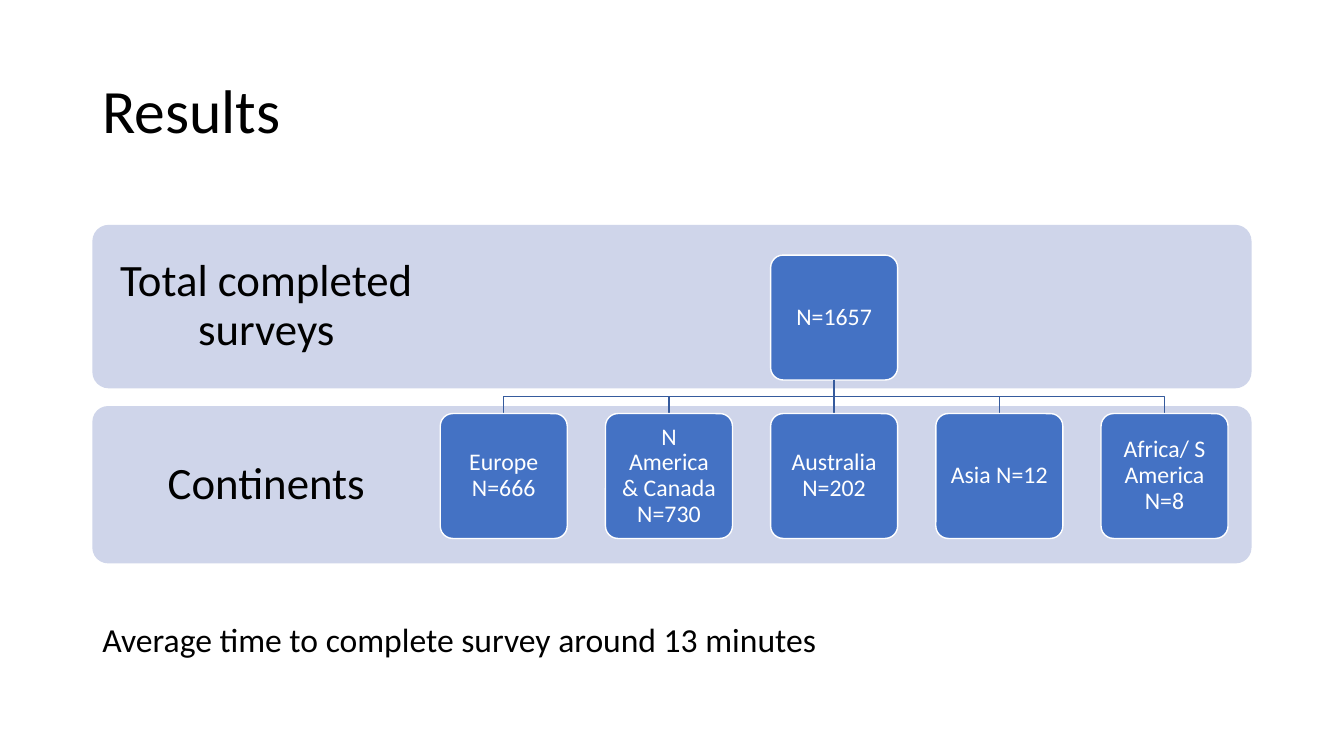
from lxml import etree
from pptx import Presentation
from pptx import util as u
from pptx.dml.color import RGBColor
from pptx.enum import shapes, text
from pptx.oxml.ns import qn

Pt = u.Pt
COLORS = {"text": "000000", "band": "CFD5EA", "node": "4472C4",
          "white": "FFFFFF", "link": "365B9D"}
CENTER = {"alignment": text.PP_ALIGN.CENTER, "line_spacing": 0.9}
LEFT = {"alignment": text.PP_ALIGN.LEFT}


def rgb(name):
    return RGBColor.from_string(COLORS[name])


def set_attrs(obj, values):
    for name, value in values.items():
        setattr(obj, name, value)


def write(sp, words, size, color, para, frame):
    tf = sp.text_frame
    set_attrs(tf, {"word_wrap": True, **frame})
    p = tf.paragraphs[0]
    set_attrs(p, para)
    r = p.add_run()
    r.text = words
    set_attrs(r.font, {"name": "Calibri", "size": Pt(size)})
    r.font.color.rgb = rgb(color)


def insets(gap):
    sides = ("left", "right", "top", "bottom")
    return {f"margin_{side}": Pt(gap) for side in sides}


def add_label(s, box, words, size, para, frame):
    sp = s.shapes.add_textbox(*map(Pt, box))
    write(sp, words, size, "text", para, frame)


def add_round_box(s, box, fill):
    sp = s.shapes.add_shape(shapes.MSO_SHAPE.ROUNDED_RECTANGLE, *map(Pt, box))
    sp.adjustments[0] = 0.1
    sp.shadow.inherit = False
    sp.fill.solid()
    sp.fill.fore_color.rgb = rgb(fill)
    sp.line.fill.background()
    return sp


def add_band(s, box, words):
    x, y, w, h = box
    add_round_box(s, box, "band")
    frame = {"vertical_anchor": text.MSO_ANCHOR.MIDDLE, **insets(18)}
    add_label(s, (x, y, w * 0.3, h), words, 32, CENTER, frame)


def add_node(s, box, words):
    sp = add_round_box(s, box, "node")
    sp.line.color.rgb = rgb("white")
    sp.line.width = Pt(1)
    frame = {"vertical_anchor": text.MSO_ANCHOR.MIDDLE, **insets(7.4)}
    write(sp, words, 17, "white", CENTER, frame)


def add_link(s, x1, y1, x2, y2):
    if x1 == x2:
        sp = s.shapes.add_connector(shapes.MSO_CONNECTOR.STRAIGHT,
                                    Pt(x1), Pt(y1), Pt(x2), Pt(y2))
        etree.SubElement(sp._element.spPr, qn("a:effectLst"))
    else:
        mid = (y1 + y2) / 2
        fb = s.shapes.build_freeform(Pt(x1), Pt(y1))
        corners = ((x1, mid), (x2, mid), (x2, y2))
        fb.add_line_segments([(Pt(x), Pt(y)) for x, y in corners], close=False)
        sp = fb.convert_to_shape()
        sp.fill.background()
        sp.shadow.inherit = False
    sp.line.color.rgb = rgb("link")
    sp.line.width = Pt(1)


def add_tree(s, box, root, leaves):
    x, y, w, h = box
    node_w, node_h = 90.7, 89.2
    pitch = (w - node_w) / (len(leaves) - 1)
    root_x = x + pitch * (len(leaves) // 2)
    leaf_y = y + h - node_h
    add_node(s, (root_x, y, node_w, node_h), root)
    for i, words in enumerate(leaves):
        leaf_x = x + i * pitch
        add_link(s, root_x + node_w / 2, y + node_h,
                 leaf_x + node_w / 2, leaf_y)
        add_node(s, (leaf_x, leaf_y, node_w, node_h), words)


def add_results(s, box):
    x, y, w, h = box
    add_label(s, (x, y, w, 104.4), "Results", 44, {**LEFT, "line_spacing": 0.9},
              {"vertical_anchor": text.MSO_ANCHOR.MIDDLE})
    add_band(s, (x, y + 131.8, w, 116.8), "Total completed surveys")
    add_band(s, (x, y + 261.2, w, 112.4), "Continents")
    add_tree(s, (x + 248.5, y + 153.4, 562.7, 202.4), "N=1657",
             ["Europe N=666", "N America & Canada N=730", "Australia N=202",
              "Asia N=12", "Africa/ S America N=8"])
    add_label(s, (x, y + 409.6, 529.2, 36),
              "Average time to complete survey around 13 minutes", 24, LEFT,
              {"word_wrap": False})


def main():
    prs = Presentation()
    set_attrs(prs, {"slide_width": Pt(960), "slide_height": Pt(540)})
    s = prs.slides.add_slide(prs.slide_layouts[6])
    add_results(s, (66, 28.8, 828, 445.6))
    prs.save("out.pptx")


if __name__ == "__main__":
    main()
